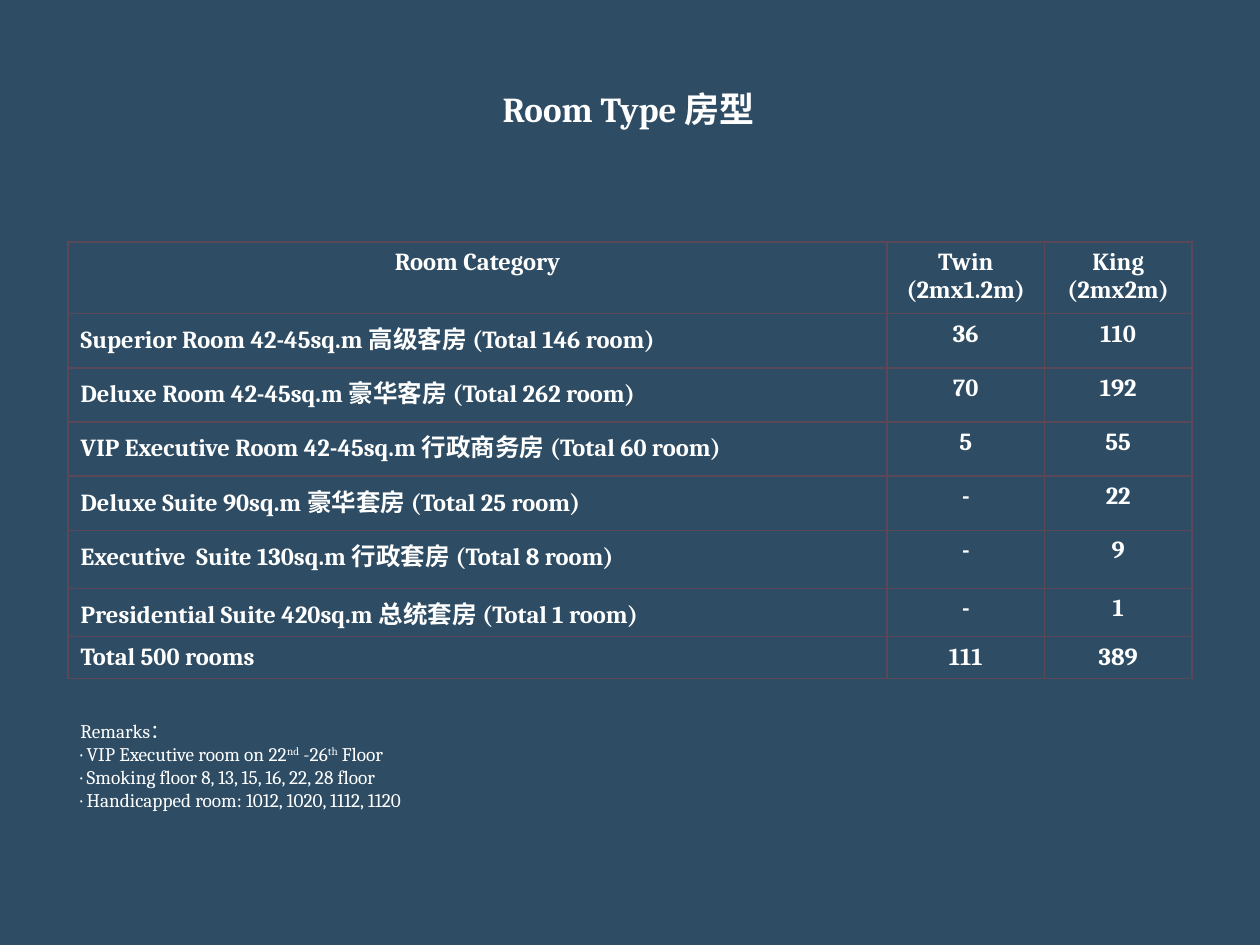
from dataclasses import dataclass

from lxml.etree import SubElement
from pptx import Presentation
from pptx.dml.color import RGBColor
from pptx.enum.shapes import MSO_SHAPE
from pptx.enum.text import PP_ALIGN
from pptx.oxml.ns import qn
from pptx.util import Inches, Pt


@dataclass(frozen=True)
class Theme:
    font: str = "Cambria"
    back: str = "2E4D64"
    ink: str = "FFFFFF"
    rule: str = "5A4757"
    title: int = 20
    body: int = 14
    note: int = 11


@dataclass(frozen=True)
class Room:
    name: str
    twin: str
    king: str
    high: float


@dataclass(frozen=True)
class Part:
    text: str
    sup: bool = False


THEME = Theme()
WIDTHS = (6.5, 1.25, 1.17)
ROOMS = (
    Room("Room Category", "Twin\n(2mx1.2m)", "King\n(2mx2m)", 0.57),
    Room("Superior Room 42-45sq.m 高级客房 (Total 146 room)", "36", "110", 0.43),
    Room("Deluxe Room 42-45sq.m 豪华客房 (Total 262 room)", "70", "192", 0.43),
    Room("VIP Executive Room 42-45sq.m 行政商务房 (Total 60 room)", "5", "55", 0.43),
    Room("Deluxe Suite 90sq.m 豪华套房 (Total 25 room)", "-", "22", 0.43),
    Room("Executive  Suite 130sq.m 行政套房 (Total 8 room)", "-", "9", 0.46),
    Room("Presidential Suite 420sq.m 总统套房 (Total 1 room)", "-", "1", 0.38),
    Room("Total 500 rooms", "111", "389", 0.33),
)
NOTES = (
    (Part("Remarks："),),
    (Part("· VIP Executive room on 22"), Part("nd", True), Part(" -26"),
     Part("th", True), Part(" Floor")),
    (Part("· Smoking floor 8, 13, 15, 16, 22, 28 floor"),),
    (Part("· Handicapped room: 1012, 1020, 1112, 1120"),),
)


def write(frame, lines, size: int, bold: bool = False, align=PP_ALIGN.LEFT) -> None:
    """Fill a text frame with one paragraph per line, run by run."""
    for i, line in enumerate(lines):
        para = frame.paragraphs[0] if i == 0 else frame.add_paragraph()
        para.alignment = align
        for part in line:
            run = para.add_run()
            run.text = part.text
            font = run.font
            font.name, font.size, font.bold = THEME.font, Pt(size), bold
            font.color.rgb = RGBColor.from_string(THEME.ink)
            if part.sup:
                run._r.get_or_add_rPr().set("baseline", "30000")


def add_text(slide, left: float, top: float, wide: float, high: float):
    box = slide.shapes.add_textbox(Inches(left), Inches(top), Inches(wide), Inches(high))
    box.text_frame.word_wrap = True
    return box.text_frame


def add_rules(cell) -> None:
    """Draw the four cell borders, ahead of the fill as the schema asks."""
    props = cell._tc.get_or_add_tcPr()
    for i, side in enumerate(("lnL", "lnR", "lnT", "lnB")):
        line = SubElement(props, qn(f"a:{side}"), w=str(Pt(1)))
        fill = SubElement(line, qn("a:solidFill"))
        SubElement(fill, qn("a:srgbClr"), val=THEME.rule)
        props.insert(i, line)


def add_rooms(slide, left: float, top: float) -> None:
    high = sum(room.high for room in ROOMS)
    table = slide.shapes.add_table(
        len(ROOMS), len(WIDTHS), Inches(left), Inches(top),
        Inches(sum(WIDTHS)), Inches(high)).table
    table.first_row = table.horz_banding = False
    for col, wide in zip(table.columns, WIDTHS):
        col.width = Inches(wide)
    for r, room in enumerate(ROOMS):
        table.rows[r].height = Inches(room.high)
        for c, text in enumerate((room.name, room.twin, room.king)):
            cell = table.cell(r, c)
            cell.fill.background()
            add_rules(cell)
            align = PP_ALIGN.LEFT if r and c == 0 else PP_ALIGN.CENTER
            lines = [(Part(line),) for line in text.split("\n")]
            write(cell.text_frame, lines, THEME.body, True, align)


def main() -> None:
    deck = Presentation()
    deck.slide_width, deck.slide_height = Inches(10), Inches(7.5)
    slide = deck.slides.add_slide(deck.slide_layouts[6])

    # Backdrop
    back = slide.shapes.add_shape(
        MSO_SHAPE.RECTANGLE, 0, Inches(-0.06), Inches(10), Inches(7.62))
    back.shadow.inherit = False
    back.fill.solid()
    back.fill.fore_color.rgb = RGBColor.from_string(THEME.back)
    back.line.fill.background()

    # Room table
    add_rooms(slide, 0.54, 1.92)

    # Title
    title = add_text(slide, 3.67, 0.58, 3.76, 0.55)
    title.margin_left = Inches(0.32)
    write(title, [(Part("Room Type 房型"),)], THEME.title, True)
    title.paragraphs[0].line_spacing = 1.2

    # Remarks
    write(add_text(slide, 0.54, 5.66, 3.46, 0.84), NOTES, THEME.note)

    deck.save("out.pptx")


if __name__ == "__main__":
    main()
